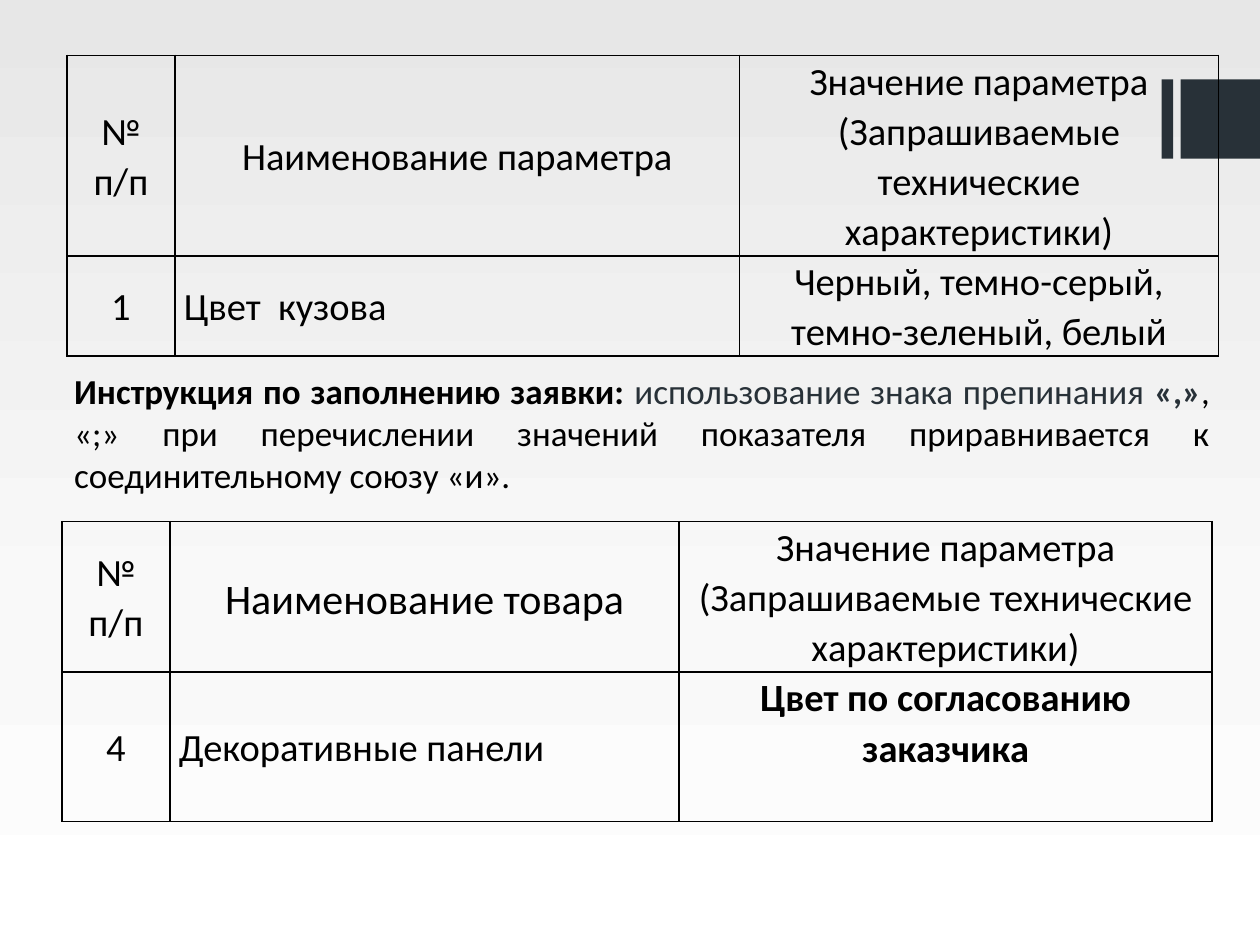
"""Build a slide with two parameter tables and a filling instruction."""
from copy import deepcopy
from lxml import etree
from pptx import Presentation, util as u
from pptx.dml.color import RGBColor
from pptx.enum import shapes, text
from pptx.oxml import ns

BLACK = RGBColor(0x00, 0x00, 0x00)
SLATE = RGBColor(0x28, 0x31, 0x38)
BACKDROP = [
    (0, RGBColor(0xE7, 0xE7, 0xE7)),
    (0.65, RGBColor(0xF9, 0xF9, 0xF9)),
    (1, RGBColor(0xFF, 0xFF, 0xFF)),
]
UNIT = u.Inches(0.1)
CENTER = text.PP_ALIGN.CENTER
LEFT = text.PP_ALIGN.LEFT
VALUE_HEADING = "Значение параметра (Запрашиваемые технические характеристики)"


def grid(*lengths):
    return [round(length * UNIT) for length in lengths]


def style_run(run, size, color=BLACK, bold=False):
    run.font.name = "Calibri"
    run.font.size = u.Pt(size)
    run.font.bold = bold
    run.font.color.rgb = color


presentation = Presentation()
presentation.slide_width, presentation.slide_height = grid(100, 75)
slide = presentation.slides.add_slide(presentation.slide_layouts[6])

backdrop = slide.background.fill
backdrop.gradient()
backdrop.gradient_angle = 270
stop_list = slide.element.find(".//" + ns.qn("a:gsLst"))
stop_list.append(deepcopy(stop_list[-1]))
for stop, (position, color) in zip(backdrop.gradient_stops, BACKDROP):
    stop.position = position
    stop.color.rgb = color

for left, width in [(92.2, 0.9), (93.7, 6.3)]:
    block = slide.shapes.add_shape(
        shapes.MSO_SHAPE.RECTANGLE, *grid(left, 6.3, width, 6.3))
    block.shadow.inherit = False
    block.fill.solid()
    block.fill.fore_color.rgb = SLATE
    block.line.fill.background()

TABLES = [
    ((5.3, 4.4), (8.6, 44.8, 38), (15.9, 7.9), [
        [("№ п/п", {}), ("Наименование параметра", {}), (VALUE_HEADING, {})],
        [("1", {}), ("Цвет  кузова", {"align": LEFT}),
         ("Черный, темно-серый, темно-зеленый, белый", {})],
    ]),
    ((4.9, 41.4), (8.6, 40.4, 42.3), (11.8, 11.8), [
        [("№ п/п", {}),
         ("Наименование товара", {"size": 24, "spacing": 1.15}),
         (VALUE_HEADING, {})],
        [("4", {}), ("Декоративные панели", {"align": LEFT}),
         ("Цвет по согласованию заказчика", {"bold": True, "bottom": 3.9})],
    ]),
]

for origin, widths, heights, rows in TABLES:
    frame = slide.shapes.add_table(
        len(heights), len(widths), *grid(*origin, sum(widths), sum(heights)))
    table = frame.table
    table.first_row = table.horz_banding = False
    for column, width in zip(table.columns, grid(*widths)):
        column.width = width
    for row, height, contents in zip(table.rows, grid(*heights), rows):
        row.height = height
        for cell, (wording, look) in zip(row.cells, contents):
            cell.margin_left, cell.margin_right = grid(0.7, 0.7)
            cell.margin_top, cell.margin_bottom = grid(0, look.get("bottom", 0))
            cell.vertical_anchor = text.MSO_ANCHOR.MIDDLE
            cell.text_frame.text = wording
            paragraph = cell.text_frame.paragraphs[0]
            paragraph.alignment = look.get("align", CENTER)
            paragraph.line_spacing = look.get("spacing", 1.07)
            style_run(paragraph.runs[0], look.get("size", 22),
                      bold=look.get("bold", False))
            properties = cell._tc.get_or_add_tcPr()
            for side in ("lnL", "lnR", "lnT", "lnB"):
                border = etree.SubElement(
                    properties, ns.qn(f"a:{side}"), w=str(u.Pt(1)))
                solid = etree.SubElement(border, ns.qn("a:solidFill"))
                etree.SubElement(solid, ns.qn("a:srgbClr"), val=str(BLACK))
            cell.fill.background()

instruction = slide.shapes.add_textbox(*grid(4.9, 28.8, 92.1, 14.5))
instruction.text_frame.word_wrap = True
paragraph = instruction.text_frame.paragraphs[0]
paragraph.alignment = text.PP_ALIGN.JUSTIFY
for wording, color, bold in [
    ("Инструкция по заполнению заявки: ", BLACK, True),
    ("использование знака препинания ", SLATE, False),
    ("«,»", SLATE, True),
    (", «;» при перечислении значений показателя приравнивается "
     "к соединительному союзу «и».", BLACK, False),
]:
    run = paragraph.add_run()
    run.text = wording
    style_run(run, 20, color, bold)

presentation.save("out.pptx")
